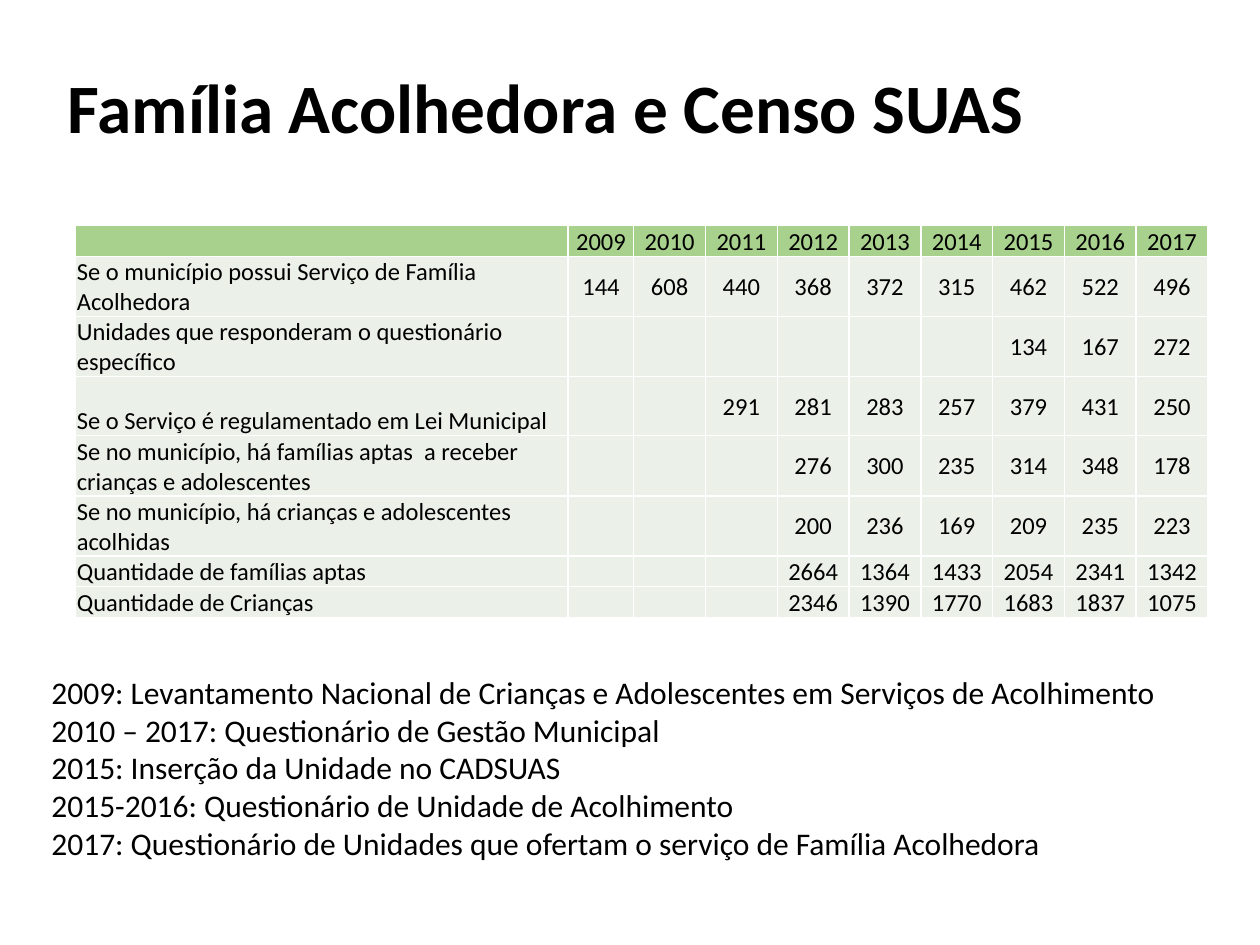
from lxml import etree
from pptx import Presentation
from pptx import util as u
from pptx.dml.color import RGBColor
from pptx.enum import text
from pptx.oxml import ns

HEADER = ["", *map(str, range(2009, 2018))]
ROWS = [
    ("Se o município possui Serviço de Família Acolhedora",
     [144, 608, 440, 368, 372, 315, 462, 522, 496]),
    ("Unidades que responderam o questionário específico", [134, 167, 272]),
    ("Se o Serviço é regulamentado em Lei Municipal",
     [291, 281, 283, 257, 379, 431, 250]),
    ("Se no município, há famílias aptas  a receber crianças e adolescentes",
     [276, 300, 235, 314, 348, 178]),
    ("Se no município, há crianças e adolescentes acolhidas",
     [200, 236, 169, 209, 235, 223]),
    ("Quantidade de famílias aptas", [2664, 1364, 1433, 2054, 2341, 1342]),
    ("Quantidade de Crianças", [2346, 1390, 1770, 1683, 1837, 1075]),
]
SOURCES = [
    "2009: Levantamento Nacional de Crianças e Adolescentes em Serviços de Acolhimento",
    "2010 – 2017: Questionário de Gestão Municipal",
    "2015: Inserção da Unidade no CADSUAS",
    "2015-2016: Questionário de Unidade de Acolhimento",
    "2017: Questionário de Unidades que ofertam o serviço de Família Acolhedora",
]
COLUMN_WIDTHS = [3.91, 0.52] + [0.57] * 8
ROW_HEIGHTS = [0.24] + [0.47] * 5 + [0.24] * 2


def color(value):
    return RGBColor.from_string(value)


def write(frame, lines, size, bold=False, align=text.PP_ALIGN.LEFT, spacing=None,
          font="Calibri", ink="000000"):
    for index, line in enumerate(lines):
        paragraph = frame.paragraphs[0] if index == 0 else frame.add_paragraph()
        paragraph.alignment = align
        if spacing:
            paragraph.line_spacing = spacing
        if not line:
            paragraph._p.get_or_add_endParaRPr().set("sz", str(size * 100))
            continue
        run = paragraph.add_run()
        run.text = line
        run.font.name = font
        run.font.size = u.Pt(size)
        run.font.bold = bold
        run.font.color.rgb = color(ink)


class SlideBuilder:
    """Holds the table style and the slide being built."""

    header_fill = "A9D18E"
    body_fill = "EBF1E9"
    border = "FFFFFF"
    border_width = u.Pt(1)

    def __init__(self, slide):
        self.slide = slide

    def text_box(self, left, top, width, height, lines, size,
                 anchor=text.MSO_ANCHOR.TOP, **style):
        shape = self.slide.shapes.add_textbox(*map(u.Inches, (left, top, width, height)))
        frame = shape.text_frame
        frame.word_wrap = True
        frame.vertical_anchor = anchor
        write(frame, lines, size, **style)

    def table(self, left, top, widths, heights, rows, size):
        frame = self.slide.shapes.add_table(
            len(rows), len(widths),
            *map(u.Inches, (left, top, sum(widths), sum(heights))))
        table = frame.table
        for column, width in zip(table.columns, widths):
            column.width = u.Inches(width)
        for row, height in zip(table.rows, heights):
            row.height = u.Inches(height)
        for row_index, values in enumerate(rows):
            for column_index, value in enumerate(values):
                self.cell(table.cell(row_index, column_index), value, size,
                          is_header=row_index == 0, is_label=column_index == 0)

    def cell(self, cell, value, size, is_header, is_label):
        cell.margin_left = cell.margin_right = cell.margin_top = u.Inches(0.01)
        cell.margin_bottom = 0
        cell.vertical_anchor = text.MSO_ANCHOR.BOTTOM if is_label else text.MSO_ANCHOR.MIDDLE
        align = text.PP_ALIGN.LEFT if is_label else text.PP_ALIGN.CENTER
        write(cell.text_frame, [value], size, align=align)
        cell.fill.solid()
        cell.fill.fore_color.rgb = color(self.header_fill if is_header else self.body_fill)
        self.borders(cell)

    def borders(self, cell):
        properties = cell._tc.get_or_add_tcPr()
        for index, side in enumerate(("lnL", "lnR", "lnT", "lnB")):
            line = etree.Element(ns.qn(f"a:{side}"), w=str(self.border_width))
            fill = etree.SubElement(line, ns.qn("a:solidFill"))
            etree.SubElement(fill, ns.qn("a:srgbClr"), val=self.border)
            properties.insert(index, line)


def main():
    presentation = Presentation()
    presentation.slide_width = u.Inches(10)
    presentation.slide_height = u.Inches(7.5)
    builder = SlideBuilder(presentation.slides.add_slide(presentation.slide_layouts[6]))
    builder.text_box(0.44, 0.67, 7.97, 0.43, ["Família Acolhedora e Censo SUAS"], 39.6,
                     anchor=text.MSO_ANCHOR.MIDDLE, bold=True, spacing=0.9)
    builder.text_box(0.31, 5.29, 9.39, 1.62, SOURCES, 18)
    years = len(HEADER) - 1
    body = [[label, *[""] * (years - len(counts)), *map(str, counts)]
            for label, counts in ROWS]
    builder.table(0.6, 1.79, COLUMN_WIDTHS, ROW_HEIGHTS, [HEADER, *body], 14)
    presentation.save("out.pptx")


if __name__ == "__main__":
    main()
